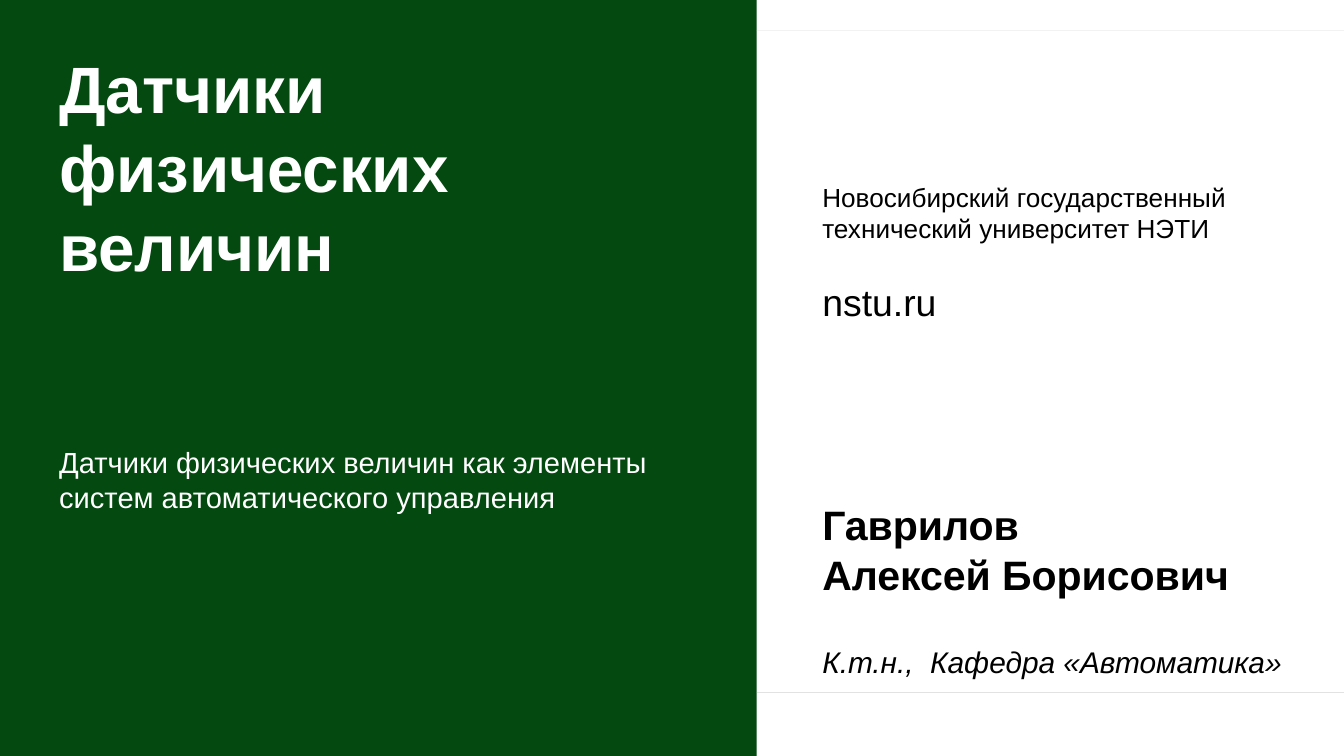
from pptx import Presentation
from pptx.dml.color import RGBColor
from pptx.enum import shapes, text
from pptx.oxml import ns
from pptx.util import Inches, Pt
from lxml import etree

GREEN, WHITE, BLACK = "034910", "FFFFFF", "000000"
SPLIT, WIDE = 5.63, 10
HIGH = WIDE * 9 / 16


def color(code):
    return RGBColor.from_string(code)


def write(box, lines, size, ink=BLACK, bold=False, left=0.1, wrap=True):
    """Fill a box with lines of text in one format."""
    frame = box.text_frame
    frame.text = "\n".join(lines)
    frame.word_wrap = wrap
    frame.auto_size = text.MSO_AUTO_SIZE.NONE
    frame.vertical_anchor = text.MSO_ANCHOR.TOP
    frame.margin_left, frame.margin_right = Inches(left), Inches(0.1)
    frame.margin_top = frame.margin_bottom = Inches(0.05)
    for para in frame.paragraphs:
        para.alignment = text.PP_ALIGN.LEFT
        para.line_spacing = 1.0
        para.space_before = Pt(0)
        font = para.font
        font.name, font.size, font.bold = "Arial", Pt(size), bold
        font.color.rgb = color(ink)
    return frame


deck = Presentation()
deck.slide_width, deck.slide_height = Inches(WIDE), Inches(HIGH)
slide = deck.slides.add_slide(deck.slide_layouts[5])
parts = slide.shapes

# Green panel and the white bands beside it
panels = [
    (SPLIT, 0, WIDE - SPLIT, 0.23, WHITE),
    (SPLIT, 5.16, WIDE - SPLIT, HIGH - 5.16, WHITE),
    (0, 0, SPLIT, HIGH, GREEN),
]
for x, y, w, h, fill in panels:
    panel = parts.add_shape(shapes.MSO_SHAPE.RECTANGLE,
                            Inches(x), Inches(y), Inches(w), Inches(h))
    panel.shadow.inherit = False
    panel.fill.solid()
    panel.fill.fore_color.rgb = color(fill)
    panel.line.fill.background()

# Hairlines along the band edges
for y, ink in [(0.23, "F2F2F2"), (5.15, "E2E2E2")]:
    edge = parts.add_connector(shapes.MSO_CONNECTOR.STRAIGHT, Inches(SPLIT),
                               Inches(y), Inches(WIDE), Inches(y))
    edge.line.color.rgb = color(ink)
    edge.line.width = Pt(0.5)
    etree.SubElement(edge.element.spPr, ns.qn("a:effectLst"))

# Title and topic, brought in front of the green panel
title = parts.title
title.left, title.top = Inches(0.44), Inches(0.31)
title.width, title.height = Inches(5.03), Inches(5.16)
frame = write(title, ["Датчики физических величин",
                      "Датчики физических величин как элементы систем автоматического управления"],
              35.1, ink=WHITE, bold=True, left=0)
topic = frame.paragraphs[-1]
topic.space_before = Pt(86)
topic.font.size, topic.font.bold = Pt(15.6), False
title.element.getparent().append(title.element)

# Author, site and university
author = parts.add_textbox(Inches(6.02), Inches(3.67), Inches(3.67), Inches(1.45))
frame = write(author, ["Гаврилов", "Алексей Борисович", "К.т.н.,  Кафедра «Автоматика»"],
              22, bold=True, wrap=False)
post = frame.paragraphs[-1]
post.space_before = Pt(24)
post.font.size, post.font.bold, post.font.italic = Pt(16), False, True

site = parts.add_textbox(Inches(6.02), Inches(2.03), Inches(1.25), Inches(0.47))
write(site, ["nstu.ru"], 20)

school = parts.add_textbox(Inches(6.02), Inches(1.3), Inches(3.57), Inches(0.81))
write(school, ["Новосибирский государственный", "технический университет НЭТИ"], 14)

deck.save("out.pptx")
